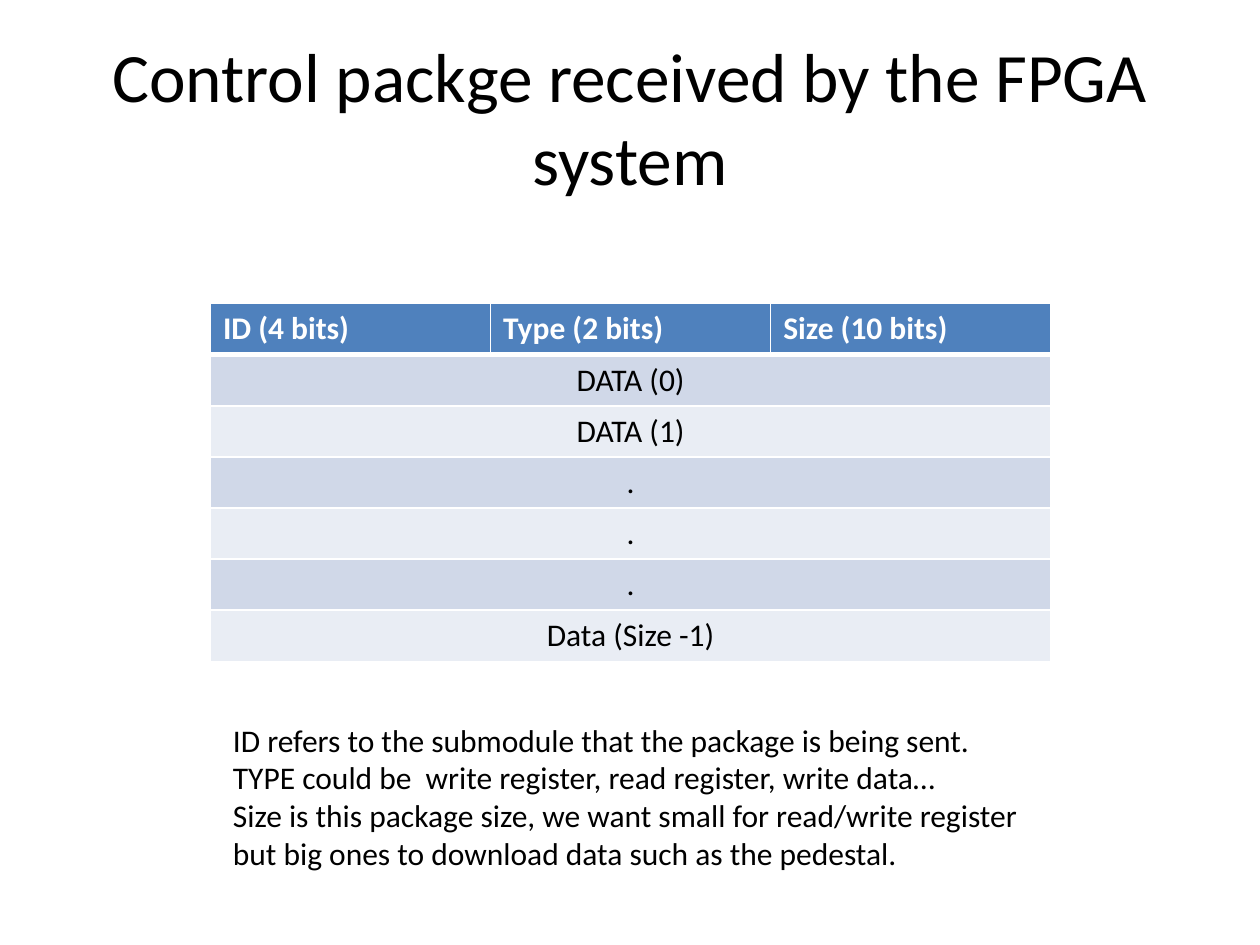
from lxml.etree import SubElement
from pptx import Presentation
from pptx.dml.color import RGBColor
from pptx.enum.text import MSO_ANCHOR as Anchor, MSO_AUTO_SIZE as AutoSize, PP_ALIGN as Align
from pptx.oxml.ns import qn
from pptx.util import Inches, Pt

BLACK = RGBColor(0x00, 0x00, 0x00)
WHITE = RGBColor(0xFF, 0xFF, 0xFF)
HEADER_BLUE = RGBColor(0x4F, 0x81, 0xBD)
BANDS = (RGBColor(0xD0, 0xD8, 0xE8), RGBColor(0xE9, 0xED, 0xF4))

HEADER_FIELDS = ("ID (4 bits)", "Type (2 bits)", "Size (10 bits)")
DATA_WORDS = ("DATA (0)", "DATA (1)", ".", ".", ".", "Data (Size -1)")
FIELD_NOTES = (
    "ID refers to the submodule that the package is being sent.",
    "TYPE could be  write register, read register, write data…",
    "Size is this package size, we want small for read/write register "
    "but big ones to download data such as the pedestal.",
)


class SlideBuilder:
    font = "Calibri"
    body_size = 18
    rule_width = 1
    header_rule_width = 3

    def __init__(self, slide):
        self.slide = slide

    def add_text_run(self, paragraph, text, size=body_size, color=BLACK, bold=False,
                     align=Align.LEFT):
        paragraph.alignment = align
        run = paragraph.add_run()
        run.text = text
        run.font.name = self.font
        run.font.size = Pt(size)
        run.font.bold = bold
        run.font.color.rgb = color

    def text(self, left, top, width, height, lines, anchor=Anchor.TOP,
             auto_size=AutoSize.NONE, **style):
        box = self.slide.shapes.add_textbox(
            Inches(left), Inches(top), Inches(width), Inches(height))
        frame = box.text_frame
        frame.word_wrap = True
        frame.auto_size = auto_size
        frame.vertical_anchor = anchor
        for index, line in enumerate(lines):
            paragraph = frame.add_paragraph() if index else frame.paragraphs[0]
            self.add_text_run(paragraph, line, **style)

    def borders(self, cell, top, bottom):
        """Draw white cell rules; top and bottom are widths in points."""
        properties = cell._tc.get_or_add_tcPr()
        widths = {"L": self.rule_width, "R": self.rule_width, "T": top, "B": bottom}
        for side, width in widths.items():
            line = SubElement(properties, qn(f"a:ln{side}"), w=str(Pt(width)))
            fill = SubElement(line, qn("a:solidFill"))
            SubElement(fill, qn("a:srgbClr"), val=str(WHITE))

    def paint(self, cell, color):
        cell.fill.solid()
        cell.fill.fore_color.rgb = color

    def packet_table(self, left, top, width, height, fields, words):
        """A header of fields above full-width, banded data words."""
        table = self.slide.shapes.add_table(
            len(words) + 1, len(fields),
            Inches(left), Inches(top), Inches(width), Inches(height)).table
        for column, field in enumerate(fields):
            cell = table.cell(0, column)
            self.borders(cell, self.rule_width, self.header_rule_width)
            self.paint(cell, HEADER_BLUE)
            self.add_text_run(cell.text_frame.paragraphs[0], field, color=WHITE, bold=True)
        for row, word in enumerate(words, start=1):
            above = self.header_rule_width if row == 1 else self.rule_width
            for column in range(len(fields)):
                cell = table.cell(row, column)
                self.borders(cell, above, self.rule_width)
                self.paint(cell, BANDS[(row - 1) % len(BANDS)])
            first = table.cell(row, 0)
            first.merge(table.cell(row, len(fields) - 1))
            self.add_text_run(first.text_frame.paragraphs[0], word, align=Align.CENTER)


def main():
    deck = Presentation()
    deck.slide_width, deck.slide_height = Inches(10), Inches(7.5)
    builder = SlideBuilder(deck.slides.add_slide(deck.slide_layouts[6]))
    builder.text(0.5, 0.3, 9, 1.25, ["Control packge received by the FPGA system"],
                 anchor=Anchor.MIDDLE, size=39.6, align=Align.CENTER)
    builder.packet_table(1.67, 2.41, 6.67, 2.84, HEADER_FIELDS, DATA_WORDS)
    builder.text(1.75, 5.67, 6.58, 1.31, FIELD_NOTES,
                 auto_size=AutoSize.SHAPE_TO_FIT_TEXT)
    deck.save("out.pptx")


if __name__ == "__main__":
    main()
